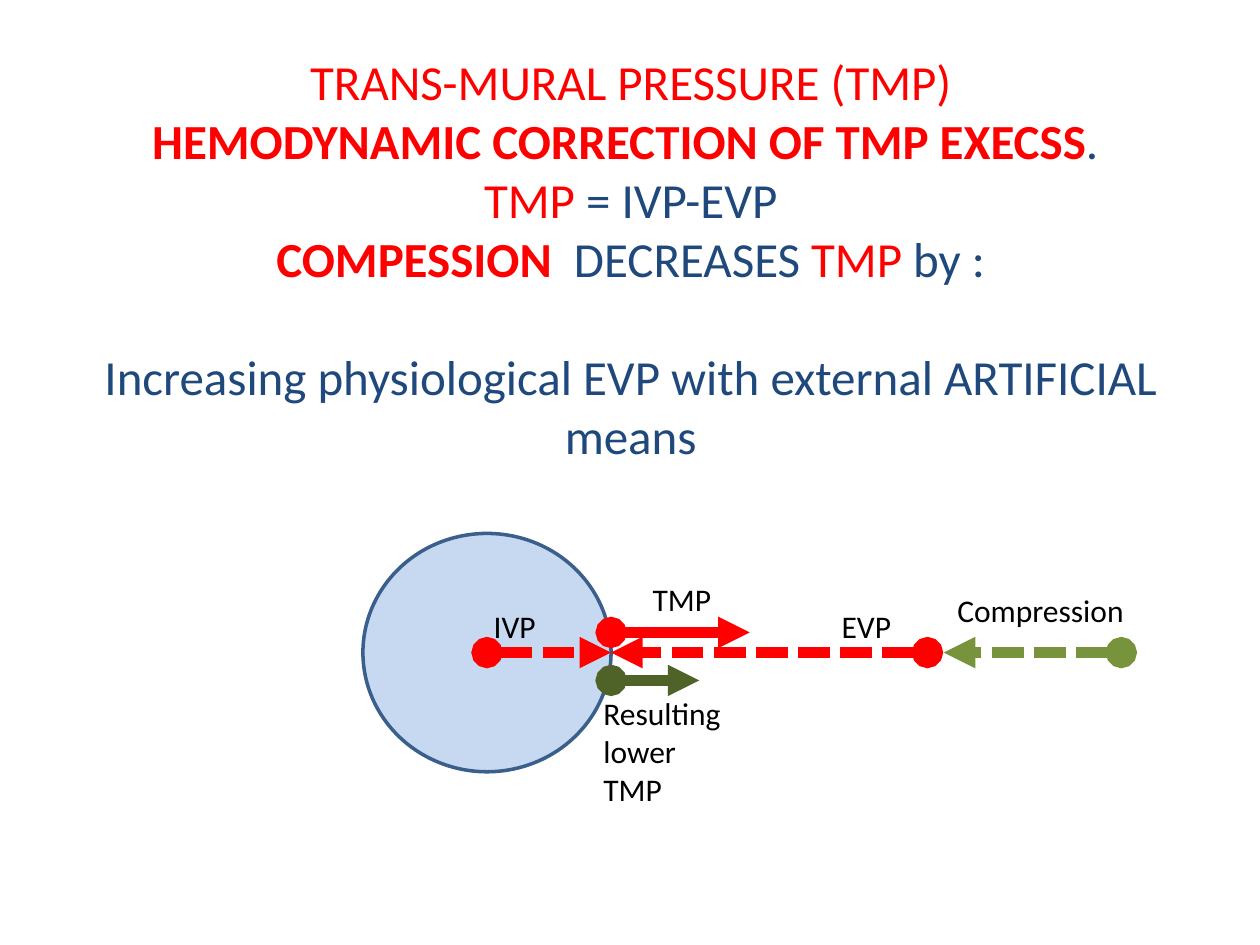
"""Build a slide on how compression lowers trans-mural pressure."""
from lxml.etree import SubElement
from pptx import Presentation
from pptx.dml.color import RGBColor
from pptx.enum.dml import MSO_LINE
from pptx.enum.shapes import MSO_CONNECTOR, MSO_SHAPE
from pptx.enum.text import MSO_ANCHOR, MSO_AUTO_SIZE, PP_ALIGN
from pptx.oxml.ns import qn
from pptx.util import Pt

COLORS = {
    "red": "FF0000",
    "navy": "1F497D",
    "vein": "C6D9F1",
    "wall": "3A5F8C",
    "green": "77933C",
    "olive": "4F6228",
    "black": "000000",
}

HEADING = [
    [("TRANS-MURAL PRESSURE (TMP)", "red", False)],
    [("HEMODYNAMIC CORRECTION OF TMP EXECSS", "red", True), (". ", "navy", False)],
    [("TMP ", "red", False), ("= IVP-EVP", "navy", False)],
    [
        ("COMPESSION", "red", True),
        ("  DECREASES ", "navy", False),
        ("TMP", "red", False),
        (" by :", "navy", False),
    ],
    [("Increasing physiological EVP with external ARTIFICIAL means", "navy", False)],
]

VEIN_LEFT, VEIN_TOP, VEIN_WIDTH, VEIN_HEIGHT = 207.4, 304.8, 141.8, 136.2
CENTER_X = VEIN_LEFT + VEIN_WIDTH / 2
WALL_X = VEIN_LEFT + VEIN_WIDTH
AXIS_Y = VEIN_TOP + VEIN_HEIGHT / 2

ARROWS = [
    (530, WALL_X, AXIS_Y, "red", True),
    (CENTER_X, WALL_X, AXIS_Y, "red", True),
    (WALL_X, 428.4, 361.4, "red", False),
    (640.8, 539.3, AXIS_Y, "green", True),
    (WALL_X, 399.6, 388.8, "olive", False),
]

LABELS = [
    ("IVP", 275, 343.4, 85, 29),
    ("EVP", 473.8, 343.4, 85, 29),
    ("TMP", 365.8, 327.6, 85, 29),
    ("Compression", 540, 334.1, 113, 29),
    ("Resulting lower  TMP", 337.7, 393.1, 85, 72.7),
]


def rgb(color):
    """Return the named colour."""
    return RGBColor.from_string(COLORS[color])


def apply_format(target, values):
    """Set every attribute in values on target."""
    for attribute, value in values.items():
        setattr(target, attribute, value)


def add_run(paragraph, text, color, size, bold=False):
    """Append formatted text to a paragraph."""
    run = paragraph.add_run()
    run.text = text
    apply_format(run.font, {"name": "Calibri", "size": Pt(size), "bold": bold})
    run.font.color.rgb = rgb(color)


def write_heading(title):
    """Place the title and fill in its centred lines."""
    apply_format(title, {"left": Pt(14.4), "top": Pt(26), "width": Pt(692), "height": Pt(288.7)})
    frame = title.text_frame
    apply_format(frame, {
        "word_wrap": True,
        "vertical_anchor": MSO_ANCHOR.TOP,
        "auto_size": MSO_AUTO_SIZE.NONE,
    })
    for index, line in enumerate(HEADING):
        paragraph = frame.add_paragraph() if index else frame.paragraphs[0]
        paragraph.alignment = PP_ALIGN.CENTER
        for text, color, bold in line:
            add_run(paragraph, text, color, 28, bold)
    paragraph.space_before = Pt(34)


def add_vein(shapes):
    """Draw the vein's cross-section."""
    vein = shapes.add_shape(
        MSO_SHAPE.OVAL, Pt(VEIN_LEFT), Pt(VEIN_TOP), Pt(VEIN_WIDTH), Pt(VEIN_HEIGHT))
    vein.shadow.inherit = False
    vein.fill.solid()
    vein.fill.fore_color.rgb = rgb("vein")
    vein.line.color.rgb = rgb("wall")
    vein.line.width = Pt(2)


def add_pressure_arrow(shapes, start_x, end_x, y, color, dashed):
    """Draw a horizontal pressure arrow that starts with a dot."""
    arrow = shapes.add_connector(
        MSO_CONNECTOR.STRAIGHT, Pt(start_x), Pt(y), Pt(end_x), Pt(y))
    arrow.line.color.rgb = rgb(color)
    arrow.line.width = Pt(6)
    if dashed:
        arrow.line.dash_style = MSO_LINE.SQUARE_DOT
    outline = arrow.line._get_or_add_ln()
    SubElement(outline, qn("a:headEnd"), type="oval")
    SubElement(outline, qn("a:tailEnd"), type="triangle")
    SubElement(arrow._element.spPr, qn("a:effectLst"))


def add_label(shapes, text, left, top, width, height):
    """Add a wrapped black label."""
    frame = shapes.add_textbox(Pt(left), Pt(top), Pt(width), Pt(height)).text_frame
    apply_format(frame, {"word_wrap": True, "auto_size": MSO_AUTO_SIZE.SHAPE_TO_FIT_TEXT})
    add_run(frame.paragraphs[0], text, "black", 18)


def main():
    """Assemble and save the slide."""
    deck = Presentation()
    apply_format(deck, {"slide_width": Pt(720), "slide_height": Pt(540)})
    shapes = deck.slides.add_slide(deck.slide_layouts[5]).shapes
    write_heading(shapes.title)
    add_vein(shapes)
    for arrow in ARROWS:
        add_pressure_arrow(shapes, *arrow)
    for label in LABELS:
        add_label(shapes, *label)
    deck.save("out.pptx")


if __name__ == "__main__":
    main()
